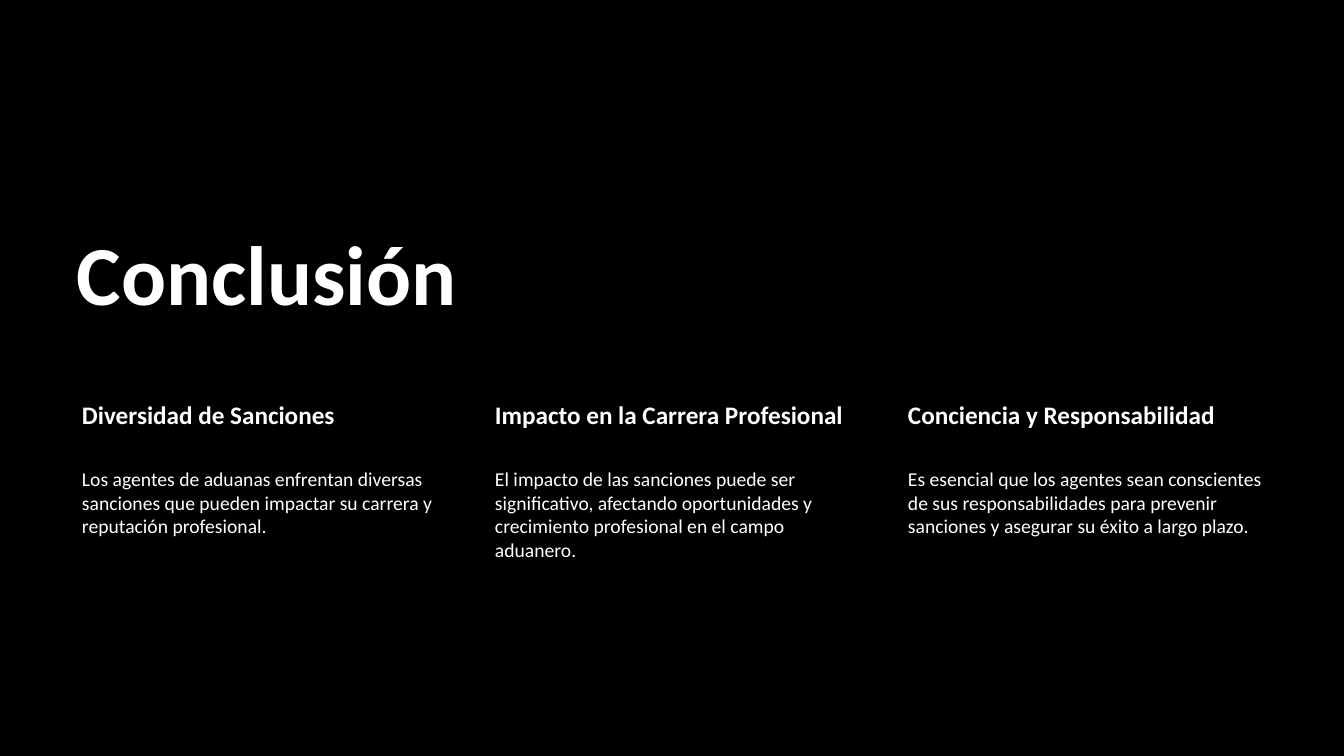
"""Builds the closing slide: a title above three columns of conclusions."""
from pptx import Presentation
from pptx.dml.color import RGBColor
from pptx.enum.text import MSO_ANCHOR
from pptx.util import Pt

TITLE = "Conclusión"
COLUMNS = [
    ("Diversidad de Sanciones",
     "Los agentes de aduanas enfrentan diversas sanciones que pueden impactar "
     "su carrera y reputación profesional."),
    ("Impacto en la Carrera Profesional",
     "El impacto de las sanciones puede ser significativo, afectando "
     "oportunidades y crecimiento profesional en el campo aduanero."),
    ("Conciencia y Responsabilidad",
     "Es esencial que los agentes sean conscientes de sus responsabilidades "
     "para prevenir sanciones y asegurar su éxito a largo plazo."),
]
COLORS = {"background": "000000", "text": "FFFFFF"}
FONT = "Calibri"
EMU_PER_PX = 914400 / 100.8

LEFT = 67
COLUMN_WIDTH, COLUMN_STEP = 375, 413
HEADING_TOP, HEADING_HEIGHT = 396, 69
BODY_HEIGHT = 208


def px(length):
    return round(length * EMU_PER_PX)


def add_text(page, text, area, insets, size, bold=False,
             anchor=MSO_ANCHOR.TOP, line_spacing=1.0):
    box = page.shapes.add_textbox(*map(px, area))
    frame = box.text_frame
    frame.word_wrap = True
    frame.vertical_anchor = anchor
    (frame.margin_left, frame.margin_top,
     frame.margin_right, frame.margin_bottom) = map(px, insets)
    para = frame.paragraphs[0]
    para.line_spacing = line_spacing
    span = para.add_run()
    span.text = text
    span.font.name = FONT
    span.font.size = Pt(size)
    span.font.bold = bold
    span.font.color.rgb = RGBColor.from_string(COLORS["text"])


def main():
    deck = Presentation()
    deck.slide_width, deck.slide_height = px(1344), px(756)
    page = deck.slides.add_slide(deck.slide_layouts[6])
    fill = page.background.fill
    fill.solid()
    fill.fore_color.rgb = RGBColor.from_string(COLORS["background"])

    add_text(page, TITLE, (LEFT, 204, 809, 125), (10, 5, 10, 5), 60,
             bold=True, anchor=MSO_ANCHOR.BOTTOM, line_spacing=0.9)
    for index, (heading, body) in enumerate(COLUMNS):
        left = LEFT + index * COLUMN_STEP
        add_text(page, heading,
                 (left, HEADING_TOP, COLUMN_WIDTH, HEADING_HEIGHT),
                 (15, 3, 3, 3), 18, bold=True)
        add_text(page, body,
                 (left, HEADING_TOP + HEADING_HEIGHT, COLUMN_WIDTH, BODY_HEIGHT),
                 (15, 2, 2, 2), 14)
    deck.save("out.pptx")


if __name__ == "__main__":
    main()
